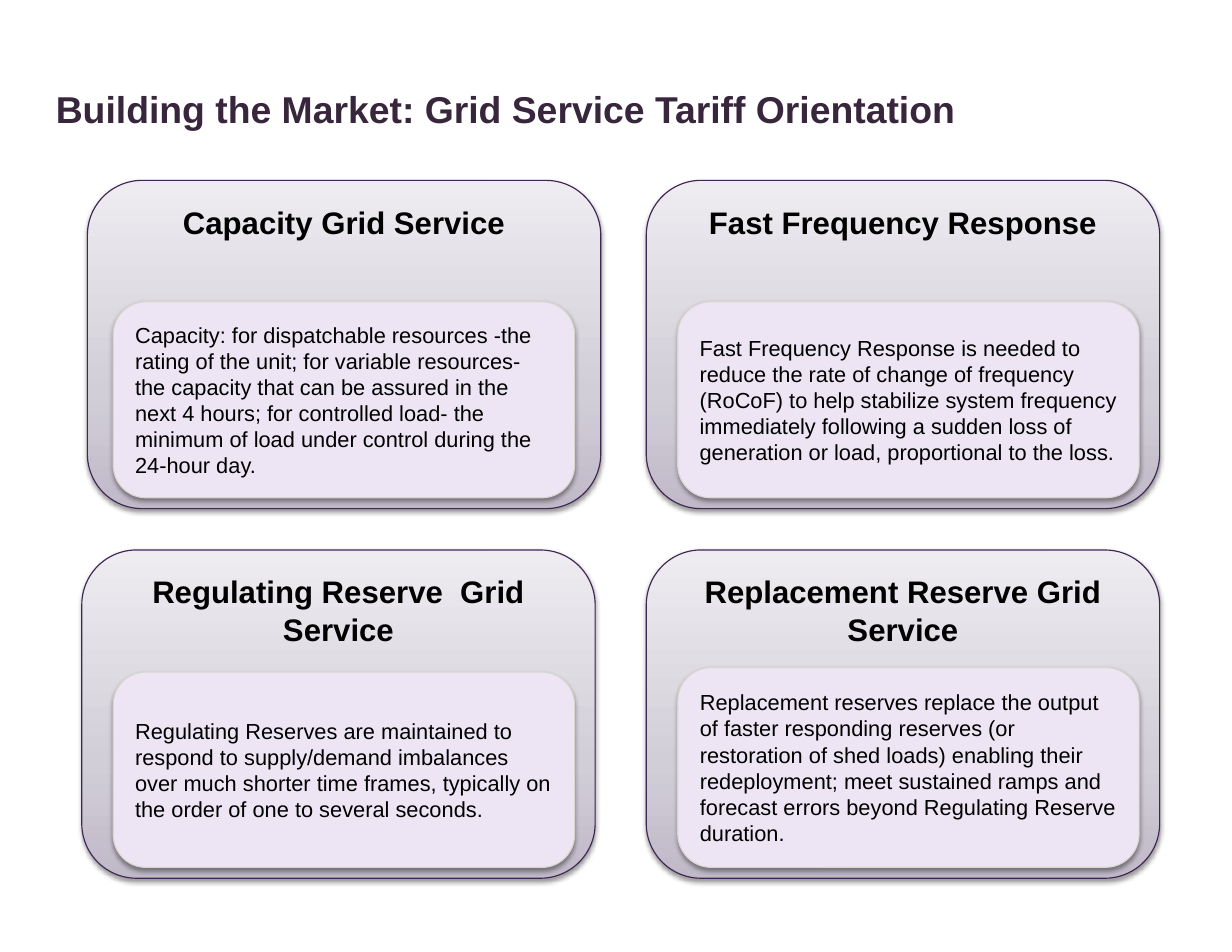
from copy import deepcopy

from lxml import etree
from pptx import Presentation
from pptx.dml.color import RGBColor
from pptx.enum.shapes import MSO_SHAPE
from pptx.enum.text import MSO_ANCHOR, PP_ALIGN
from pptx.oxml.ns import qn
from pptx.util import Pt

ROUND = MSO_SHAPE.ROUNDED_RECTANGLE
LEFT, CENTER = PP_ALIGN.LEFT, PP_ALIGN.CENTER
TOP, MIDDLE = MSO_ANCHOR.TOP, MSO_ANCHOR.MIDDLE
SHADE = [(0, "C0B9C8"), (0.35, "D2CED8"), (1, "EEECF1")]
WIDTH, HEIGHT = 330, 211
RIGHT = 415.5
UPPER, LOWER = 116, 353.6

CARDS = [
    (52.6, LOWER, 20.2, 78.4, "Regulating Reserve  Grid Service",
     "Regulating Reserves are maintained to respond to supply/demand "
     "imbalances over much shorter time frames, typically on the order of "
     "one to several seconds."),
    (RIGHT, LOWER, 20.2, 75.6, "Replacement Reserve Grid Service",
     "Replacement reserves replace the output of faster responding reserves "
     "(or restoration of shed loads) enabling their redeployment; meet "
     "sustained ramps and forecast errors beyond Regulating Reserve duration."),
    (56.2, UPPER, 16.6, 78, "Capacity Grid Service",
     "Capacity: for dispatchable resources -the rating of the unit; for "
     "variable resources- the capacity that can be assured in the next 4 "
     "hours; for controlled load- the minimum of load under control during "
     "the 24-hour day."),
    (RIGHT, UPPER, 20.2, 78, "Fast Frequency Response",
     "Fast Frequency Response is needed to reduce the rate of change of "
     "frequency (RoCoF) to help stabilize system frequency immediately "
     "following a sudden loss of generation or load, proportional to the loss."),
]


def color(code):
    return RGBColor.from_string(code)


def write(shape, text, size=14, ink="000000", bold=False, align=LEFT,
          anchor=MIDDLE, pad=(7.2, 3.6)):
    frame = shape.text_frame
    frame.word_wrap = True
    frame.vertical_anchor = anchor
    frame.margin_left = frame.margin_right = Pt(pad[0])
    frame.margin_top = frame.margin_bottom = Pt(pad[1])
    para = frame.paragraphs[0]
    para.alignment = align
    run = para.add_run()
    run.text = text
    run.font.name = "Arial"
    run.font.size = Pt(size)
    run.font.bold = bold
    run.font.color.rgb = color(ink)


def shadow(shape):
    shape.shadow.inherit = False
    effects = shape._element.spPr.find(qn("a:effectLst"))
    outer = etree.SubElement(effects, qn("a:outerShdw"), blurRad=str(Pt(3.1)),
                             dist=str(Pt(1.6)), dir="5400000", rotWithShape="0")
    tint = etree.SubElement(outer, qn("a:srgbClr"), val="000000")
    etree.SubElement(tint, qn("a:alpha"), val="38000")


def shade(fill, stops):
    fill.gradient()
    fill.gradient_angle = 90
    first = fill._xPr.find(".//" + qn("a:gs"))
    first.addnext(deepcopy(first))
    for stop, (place, code) in zip(fill.gradient_stops, stops):
        stop.position = place
        stop.color.rgb = color(code)


def panel(slide, box, edge):
    shape = slide.shapes.add_shape(ROUND, *map(Pt, box))
    shape.line.color.rgb = color(edge)
    shape.line.width = Pt(0.75)
    shadow(shape)
    return shape


def card(slide, box, inset, drop, head, body):
    left, top, width, height = box
    outer = panel(slide, box, "402654")
    shade(outer.fill, SHADE)
    write(outer, head, size=20, bold=True, align=CENTER, anchor=TOP,
          pad=(7.9, 4.3))
    inner = panel(slide, (left + inset, top + drop, width - 33.4,
                          height - drop - 7), "D9D5CF")
    inner.fill.solid()
    inner.fill.fore_color.rgb = color("EDE5F3")
    write(inner, body, pad=(7.9, 4.3))


def title(slide, box, text):
    shape = slide.shapes.add_textbox(*map(Pt, box))
    write(shape, text, size=24, ink="38273C", bold=True)


def main():
    deck = Presentation()
    deck.slide_width, deck.slide_height = Pt(792), Pt(612)
    slide = deck.slides.add_slide(deck.slide_layouts[6])
    for left, top, inset, drop, head, body in CARDS:
        card(slide, (left, top, WIDTH, HEIGHT), inset, drop, head, body)
    title(slide, (28.8, 32.4, 657.4, 74.9),
          "Building the Market: Grid Service Tariff Orientation")
    deck.save("out.pptx")


if __name__ == "__main__":
    main()
